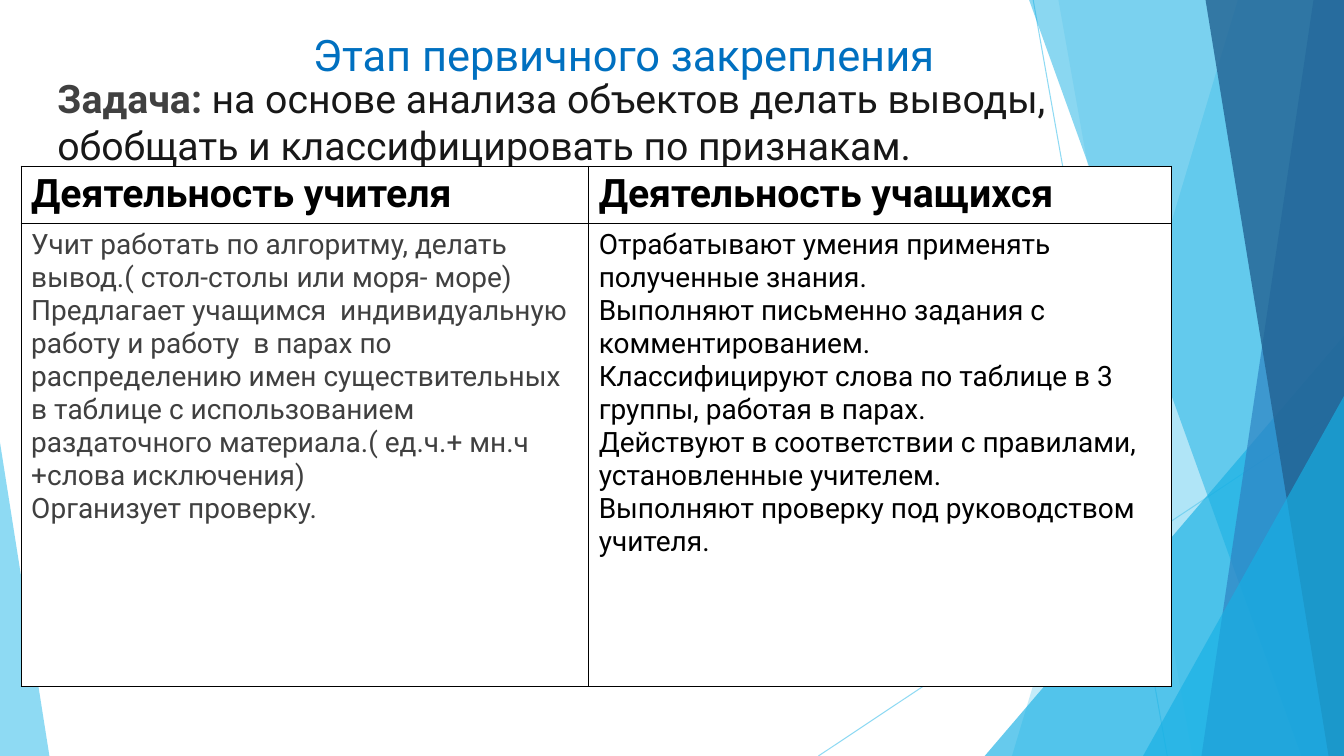
"""Build the lesson-stage slide with a table of teacher and pupil activities."""
from lxml import etree
from pptx import Presentation
from pptx.dml.color import RGBColor
from pptx.enum.shapes import MSO_CONNECTOR, MSO_SHAPE
from pptx.enum.text import MSO_ANCHOR, MSO_AUTO_SIZE, PP_ALIGN
from pptx.oxml.ns import qn
from pptx.util import Pt

STRAIGHT = MSO_CONNECTOR.STRAIGHT
TRIANGLE = MSO_SHAPE.ISOSCELES_TRIANGLE
CENTER, LEFT = PP_ALIGN.CENTER, PP_ALIGN.LEFT
MIDDLE, TOP = MSO_ANCHOR.MIDDLE, MSO_ANCHOR.TOP
NO_AUTOFIT = MSO_AUTO_SIZE.NONE

WIDTH, HEIGHT = 960, 540
FONT = "Roboto"

TITLE = "Этап первичного закрепления"
TASK = [
    ("Задача: ", True, "404040"),
    ("на основе анализа объектов делать выводы, "
     "обобщать и классифицировать по признакам.", False, "181818"),
]
COLUMNS = [
    ("Деятельность учителя", 405.4, "404040", [
        "Учит работать по алгоритму, делать вывод.( стол-столы или моря- море)",
        "Предлагает учащимся  индивидуальную работу и работу  в парах по "
        "распределению имен существительных в таблице с использованием "
        "раздаточного материала.( ед.ч.+ мн.ч +слова исключения)",
        "Организует проверку.",
    ]),
    ("Деятельность учащихся", 416.2, "000000", [
        "Отрабатывают умения применять полученные знания.",
        "Выполняют письменно задания с комментированием.",
        "Классифицируют слова по таблице в 3 группы, работая в парах.",
        "Действуют в соответствии с правилами, установленные учителем.",
        "Выполняют проверку под руководством учителя.",
    ]),
]
ROW_HEIGHTS = (41, 330.5)
TABLE_LEFT, TABLE_TOP = 15.1, 118.8

RAYS = [(738, 0, 833.8, HEIGHT), (WIDTH, 290.2, 584.6, HEIGHT)]
BACKDROP = [
    ("band", (884.2, 722.9), "5FCBEF", 36),
    ("band", (756, 851.8), "5FCBEF", 20),
    ("triangle", (703.4, 239.8, WIDTH, 1), "17B0E4", 66),
    ("band", (735.1, 929.5), "17B0E4", 50),
    ("band", (938.2, 858.2), "2E83C3", 70),
    ("band", (861.1, 949), "226292", 80),
    ("triangle", (816.5, 283, WIDTH, 1), "17B0E4", 66),
    ("triangle", (0, 316.1, 35.3, 0), "5FCBEF", 70),
]


def color(value):
    return RGBColor.from_string(value)


def set_opacity(shape, percent):
    for node in shape.element.spPr.iter(qn("a:srgbClr")):
        etree.SubElement(node, qn("a:alpha"), val=str(percent * 1000))


def add_ray(slide, points):
    ray = slide.shapes.add_connector(STRAIGHT, *(Pt(value) for value in points))
    ray.line.color.rgb = color("5FCBEF")
    ray.line.width = Pt(0.75)
    set_opacity(ray, 70)
    etree.SubElement(ray.element.spPr, qn("a:effectLst"))


def add_backdrop(slide, kind, geometry, fill, opacity):
    if kind == "band":
        top_x, bottom_x = geometry
        builder = slide.shapes.build_freeform(Pt(top_x), 0)
        corners = [(WIDTH, 0), (WIDTH, HEIGHT), (bottom_x, HEIGHT)]
        builder.add_line_segments([(Pt(x), Pt(y)) for x, y in corners], close=True)
        shape = builder.convert_to_shape()
    else:
        left, top, right, apex = geometry
        shape = slide.shapes.add_shape(
            TRIANGLE, Pt(left), Pt(top), Pt(right - left), Pt(HEIGHT - top))
        shape.adjustments[0] = apex
    shape.shadow.inherit = False
    shape.fill.solid()
    shape.fill.fore_color.rgb = color(fill)
    shape.line.fill.background()
    set_opacity(shape, opacity)


def style_font(font, size, value, bold=False):
    font.name = FONT
    font.size = Pt(size)
    font.bold = bold
    font.color.rgb = color(value)


def place(placeholder, left, top, width, height, anchor):
    placeholder.left, placeholder.top = Pt(left), Pt(top)
    placeholder.width, placeholder.height = Pt(width), Pt(height)
    frame = placeholder.text_frame
    frame.auto_size = NO_AUTOFIT
    frame.word_wrap = True
    frame.vertical_anchor = anchor
    placeholder.element.getparent().append(placeholder.element)
    return frame.paragraphs[0]


def fill_cell(cell, lines, size, value, bold):
    properties = cell._tc.get_or_add_tcPr()
    for side in ("a:lnL", "a:lnR", "a:lnT", "a:lnB"):
        border = etree.SubElement(properties, qn(side), w=str(Pt(1)))
        solid = etree.SubElement(border, qn("a:solidFill"))
        etree.SubElement(solid, qn("a:srgbClr"), val="000000")
    cell.fill.solid()
    cell.fill.fore_color.rgb = color("FFFFFF")
    cell.text = "\n".join(lines)
    for paragraph in cell.text_frame.paragraphs:
        style_font(paragraph.font, size, value, bold)


def add_activity_table(slide):
    total_width = sum(column[1] for column in COLUMNS)
    table = slide.shapes.add_table(
        len(ROW_HEIGHTS), len(COLUMNS), Pt(TABLE_LEFT), Pt(TABLE_TOP),
        Pt(total_width), Pt(sum(ROW_HEIGHTS))).table
    table.first_row = table.horz_banding = False
    for row, height in zip(table.rows, ROW_HEIGHTS):
        row.height = Pt(height)
    for index, (heading, width, value, lines) in enumerate(COLUMNS):
        table.columns[index].width = Pt(width)
        fill_cell(table.cell(0, index), [heading], 28, "000000", True)
        fill_cell(table.cell(1, index), lines, 20, value, False)


def main():
    presentation = Presentation()
    presentation.slide_width, presentation.slide_height = Pt(WIDTH), Pt(HEIGHT)
    slide = presentation.slides.add_slide(presentation.slide_layouts[1])
    for points in RAYS:
        add_ray(slide, points)
    for item in BACKDROP:
        add_backdrop(slide, *item)

    heading = place(slide.shapes.title, 59, 13.7, 772.6, 50.4, MIDDLE)
    heading.text = TITLE
    heading.alignment = CENTER
    style_font(heading.font, 31, "0070C0")

    task = place(slide.placeholders[1], 33.8, 49.7, 802.1, 428.4, TOP)
    task.alignment = LEFT
    task.space_before = Pt(0)
    properties = task._p.get_or_add_pPr()
    properties.set("marL", "0")
    properties.set("indent", "0")
    etree.SubElement(properties, qn("a:buNone"))
    for text, bold, value in TASK:
        run = task.add_run()
        run.text = text
        style_font(run.font, 28, value, bold)

    add_activity_table(slide)
    presentation.save("out.pptx")


if __name__ == "__main__":
    main()
